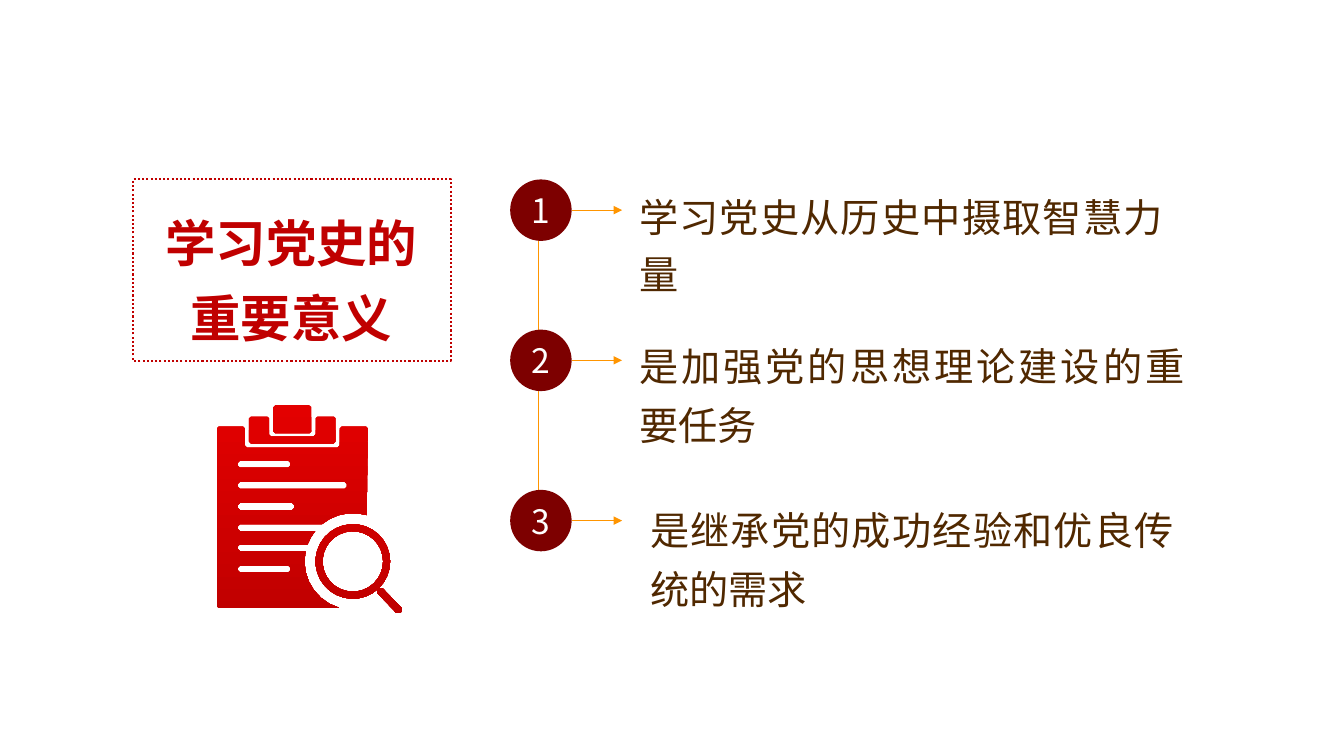
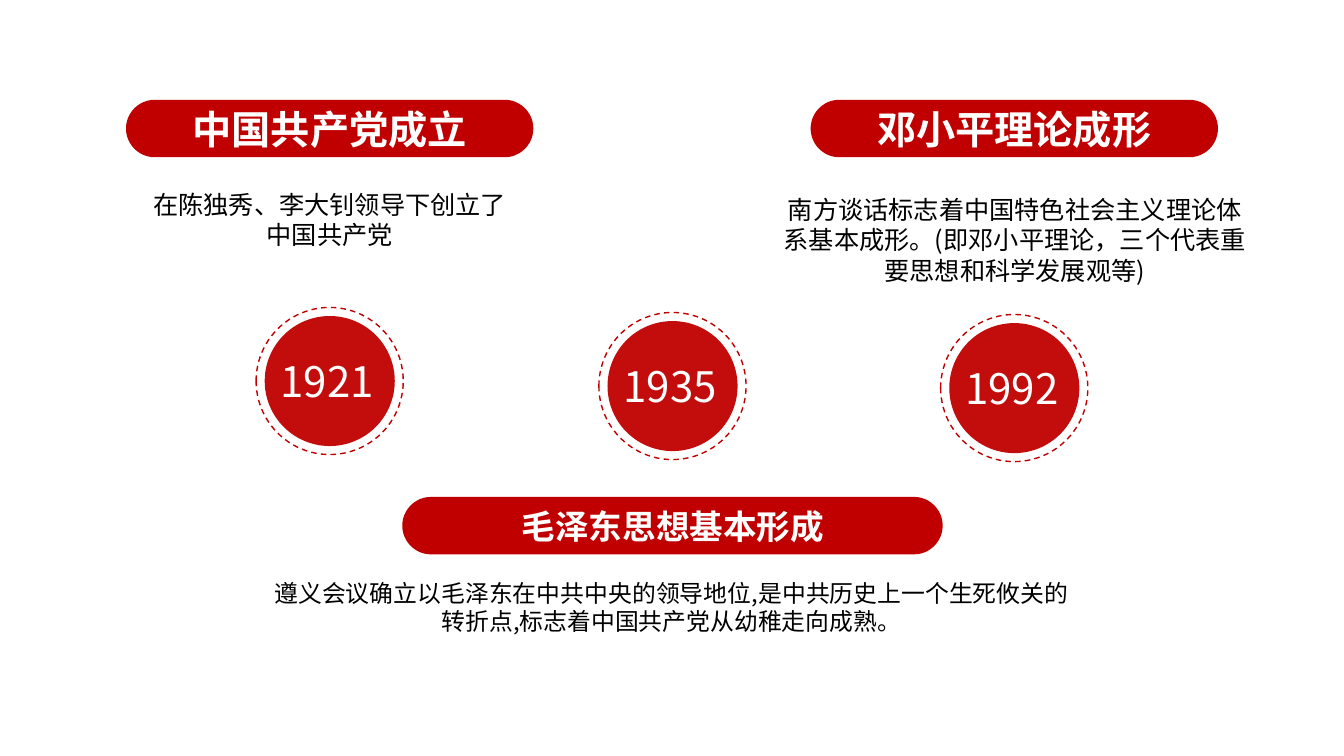
from dataclasses import dataclass
from math import atan2, cos, hypot, pi, sin, sqrt

from lxml.etree import SubElement
from pptx import Presentation
from pptx.dml.color import RGBColor
from pptx.enum.dml import MSO_LINE
from pptx.enum.shapes import MSO_CONNECTOR, MSO_SHAPE
from pptx.enum.text import MSO_ANCHOR, MSO_AUTO_SIZE, PP_ALIGN
from pptx.oxml.ns import qn
from pptx.util import Inches, Pt


@dataclass(frozen=True)
class Theme:
    font: str = "Noto Sans CJK SC"
    red: str = "C00000"
    bright: str = "E30000"
    maroon: str = "7D0000"
    orange: str = "FF9500"
    brown: str = "502800"
    black: str = "000000"
    white: str = "FFFFFF"
    title: int = 36
    year: int = 30
    item: int = 28
    number: int = 24
    note: int = 18
    long_note: int = 17


THEME = Theme()

TITLE = "学习党史的重要意义"
REASONS = [
    ("学习党史从历史中摄取智慧力量", 1.78, (6.24, 1.78, 5.39, 1.2), 1.2),
    ("是加强党的思想理论建设的重要任务", 3.27, (6.24, 3.23, 5.61, 1.24), 1.25),
    ("是继承党的成功经验和优良传统的需求", 4.86, (6.35, 4.86, 5.39, 1.24), 1.25),
]
NUMBER_LEFT, NUMBER_SIZE = 5.06, 0.61
ARROW_LENGTH = 0.5

YEARS = [("1921", 2.54, 3.05), ("1935", 5.94, 3.1), ("1992", 9.33, 3.12)]
RING_SIZE, DISC_SIZE = 1.46, 1.29
YEAR_WIDTH, YEAR_HEIGHT = 1.17, 0.61
PILLS = [
    ("毛泽东思想基本形成", (3.99, 4.93, 5.36, 0.57), THEME.number, PP_ALIGN.LEFT, 1.1),
    ("中国共产党成立", (1.25, 0.99, 4.04, 0.57), THEME.item, PP_ALIGN.CENTER, 0.1),
    ("邓小平理论成形", (8.04, 0.99, 4.04, 0.57), THEME.item, PP_ALIGN.CENTER, 0.1),
]
NOTES = [
    ("在陈独秀、李大钊领导下创立了中国共产党", (1.3, 1.83, 3.94, 0.71), THEME.note),
    ("遵义会议确立以毛泽东在中共中央的领导地位,是中共历史上一个生死攸关的转折点,标志着中国共产党从幼稚走向成熟。",
     (2.54, 5.69, 8.24, 0.67), THEME.long_note),
    ("南方谈话标志着中国特色社会主义理论体系基本成形。(即邓小平理论，三个代表重要思想和科学发展观等)",
     (7.63, 1.88, 4.87, 1.01), THEME.note),
]

LENS = (3.5, 5.57)
LENS_INNER, LENS_OUTER, LENS_GAP = 0.3, 0.37, 0.48
TEXT_BARS = [(4.57, 2.88), (4.78, 3.44), (4.99, 2.92), (5.61, 2.88)]
BAR_LEFT, BAR_HEIGHT = 2.36, 0.07
HANDLE = [(3.78, 5.82), (4, 6.05), (3.95, 6.1), (3.73, 5.87)]


def rgb(color):
    return RGBColor.from_string(color)


def box(values):
    return [Inches(value) for value in values]


def write(shape, text, size, color, align=PP_ALIGN.CENTER, bold=False,
          spacing=None, anchor=MSO_ANCHOR.TOP, wrap=True):
    frame = shape.text_frame
    frame.auto_size = MSO_AUTO_SIZE.NONE
    frame.word_wrap = wrap
    frame.vertical_anchor = anchor
    paragraph = frame.paragraphs[0]
    paragraph.alignment = align
    if spacing:
        paragraph.line_spacing = spacing
    run = paragraph.add_run()
    run.text = text
    run.font.name = THEME.font
    run.font.size = Pt(size)
    run.font.bold = bold
    run.font.color.rgb = rgb(color)
    east_asian = SubElement(run.font._element, qn("a:ea"))
    east_asian.set("typeface", THEME.font)


def add_text(slide, text, place, size, color, **style):
    write(slide.shapes.add_textbox(*box(place)), text, size, color, **style)


def add_figure(slide, kind, place, fill=None, outline=None):
    shape = slide.shapes.add_shape(kind, *box(place))
    shape.shadow.inherit = False
    if fill:
        shape.fill.solid()
        shape.fill.fore_color.rgb = rgb(fill)
    else:
        shape.fill.background()
    if outline:
        width, dash = outline
        shape.line.color.rgb = rgb(THEME.red)
        shape.line.width = Pt(width)
        shape.line.dash_style = dash
    else:
        shape.line.fill.background()
    return shape


def add_line(slide, start, end, arrow=False):
    line = slide.shapes.add_connector(MSO_CONNECTOR.STRAIGHT, *box(start + end))
    line.line.color.rgb = rgb(THEME.orange)
    line.line.width = Pt(0.5)
    if arrow:
        SubElement(line.line._get_or_add_ln(), qn("a:tailEnd")).set("type", "triangle")
    SubElement(line._element.spPr, qn("a:effectLst"))


def arc(radius, start, end):
    steps = max(1, round(abs(end - start) / 0.2))
    angles = [start + (end - start) * step / steps for step in range(steps + 1)]
    return [(LENS[0] + radius * cos(angle), LENS[1] + radius * sin(angle)) for angle in angles]


def gap_angle(y, side=-1):
    rise = y - LENS[1]
    angle = atan2(rise, side * sqrt(LENS_GAP ** 2 - rise ** 2))
    return angle if angle > 0 else angle + 2 * pi


def gap_arc(top, bottom, side=-1):
    return arc(LENS_GAP, gap_angle(top, side), gap_angle(bottom))


def rectangle(left, top, right, bottom):
    return [(left, top), (right, top), (right, bottom), (left, bottom)]


def bevelled(points, cut=0.02):
    outline = []
    for index, (x, y) in enumerate(points):
        sides = []
        for near_x, near_y in (points[index - 1], points[(index + 1) % len(points)]):
            length = hypot(near_x - x, near_y - y)
            sides.append(((near_x - x) / length, (near_y - y) / length))
        (x1, y1), (x2, y2) = sides
        if abs(x1 * x2 + y1 * y2) < 0.1:
            outline += [(x + side_x * cut, y + side_y * cut) for side_x, side_y in sides]
        else:
            outline.append((x, y))
    return outline


def clipboard_outlines():
    sheet = [(2.15, 4.23), (2.43, 4.23), (2.43, 4.44), (3.37, 4.44), (3.37, 4.23), (3.65, 4.23)]
    sheet += gap_arc(5.11, 5.2, side=1)
    sheet += [(BAR_LEFT, 5.2), (BAR_LEFT, 5.27)] + gap_arc(5.27, 5.4)
    sheet += [(BAR_LEFT, 5.4), (BAR_LEFT, 5.47)] + gap_arc(5.47, 6.03)
    sheet += [(2.15, 6.03)]
    clip = [(2.47, 4.13), (2.67, 4.13), (2.67, 4.33), (3.13, 4.33),
            (3.13, 4.13), (3.33, 4.13), (3.33, 4.4), (2.47, 4.4)]
    shapes = [sheet, clip, rectangle(2.71, 4.02, 3.09, 4.3), HANDLE]
    shapes += [rectangle(BAR_LEFT, top, right, top + BAR_HEIGHT) for top, right in TEXT_BARS]
    circles = [arc(LENS_OUTER, 0, 2 * pi), arc(LENS_INNER, 2 * pi, 0)]
    return [bevelled(points) for points in shapes] + [circle[:-1] for circle in circles]


def add_clipboard(slide):
    builder = None
    for outline in clipboard_outlines():
        start, *others = [box(point) for point in outline]
        if builder is None:
            builder = slide.shapes.build_freeform(*start, scale=1.0)
        else:
            builder.move_to(*start)
        builder.add_line_segments(others, close=True)
    clipboard = builder.convert_to_shape()
    clipboard.shadow.inherit = False
    clipboard.line.fill.background()
    clipboard.fill.gradient()
    clipboard.fill.gradient_angle = 270
    for stop, color in zip(clipboard.fill.gradient_stops, (THEME.bright, THEME.red)):
        stop.color.rgb = rgb(color)


def build_reasons(presentation):
    slide = presentation.slides.add_slide(presentation.slide_layouts[5])
    add_figure(slide, MSO_SHAPE.RECTANGLE, (1.32, 1.78, 3.15, 1.8),
               outline=(1.5, MSO_LINE.ROUND_DOT))
    title = slide.shapes.title
    title.left, title.top, title.width, title.height = box((1.3, 1.9, 3.18, 1.56))
    write(title, TITLE, THEME.title, THEME.red, bold=True, spacing=1.25)
    add_line(slide, (5.34, 1.97), (5.34, 5.23))
    for number, (text, top, place, spacing) in enumerate(REASONS, 1):
        add_text(slide, text, place, THEME.item, THEME.brown,
                 align=PP_ALIGN.JUSTIFY, spacing=spacing)
        badge = add_figure(slide, MSO_SHAPE.OVAL,
                           (NUMBER_LEFT, top, NUMBER_SIZE, NUMBER_SIZE), THEME.maroon)
        write(badge, str(number), THEME.number, THEME.white,
              anchor=MSO_ANCHOR.MIDDLE, wrap=False)
        right, middle = NUMBER_LEFT + NUMBER_SIZE, top + NUMBER_SIZE / 2
        add_line(slide, (right, middle), (right + ARROW_LENGTH, middle), arrow=True)
    add_clipboard(slide)


def build_timeline(presentation):
    slide = presentation.slides.add_slide(presentation.slide_layouts[6])
    margin = (RING_SIZE - DISC_SIZE) / 2
    for year, left, top in YEARS:
        add_figure(slide, MSO_SHAPE.OVAL, (left, top, RING_SIZE, RING_SIZE),
                   outline=(1, MSO_LINE.DASH))
        disc = add_figure(slide, MSO_SHAPE.OVAL,
                          (left + margin, top + margin, DISC_SIZE, DISC_SIZE), THEME.red)
        color = disc._element.spPr.find(qn("a:solidFill")).find(qn("a:srgbClr"))
        SubElement(color, qn("a:alpha")).set("val", "95000")
        label = (left + (RING_SIZE - YEAR_WIDTH) / 2, top + (RING_SIZE - YEAR_HEIGHT) / 2,
                 YEAR_WIDTH, YEAR_HEIGHT)
        add_text(slide, year, label, THEME.year, THEME.white, align=PP_ALIGN.LEFT)
    for text, place, size in NOTES:
        add_text(slide, text, place, size, THEME.black)
    for text, place, size, align, inset in PILLS:
        pill = add_figure(slide, MSO_SHAPE.ROUNDED_RECTANGLE, place, THEME.red)
        pill.adjustments[0] = 0.5
        pill.text_frame.margin_left = Inches(inset)
        write(pill, text, size, THEME.white, align=align, bold=True, anchor=MSO_ANCHOR.MIDDLE)


def main():
    presentation = Presentation()
    presentation.slide_width = Inches(13.33)
    presentation.slide_height = Inches(7.5)
    build_reasons(presentation)
    build_timeline(presentation)
    presentation.save("out.pptx")


if __name__ == "__main__":
    main()
